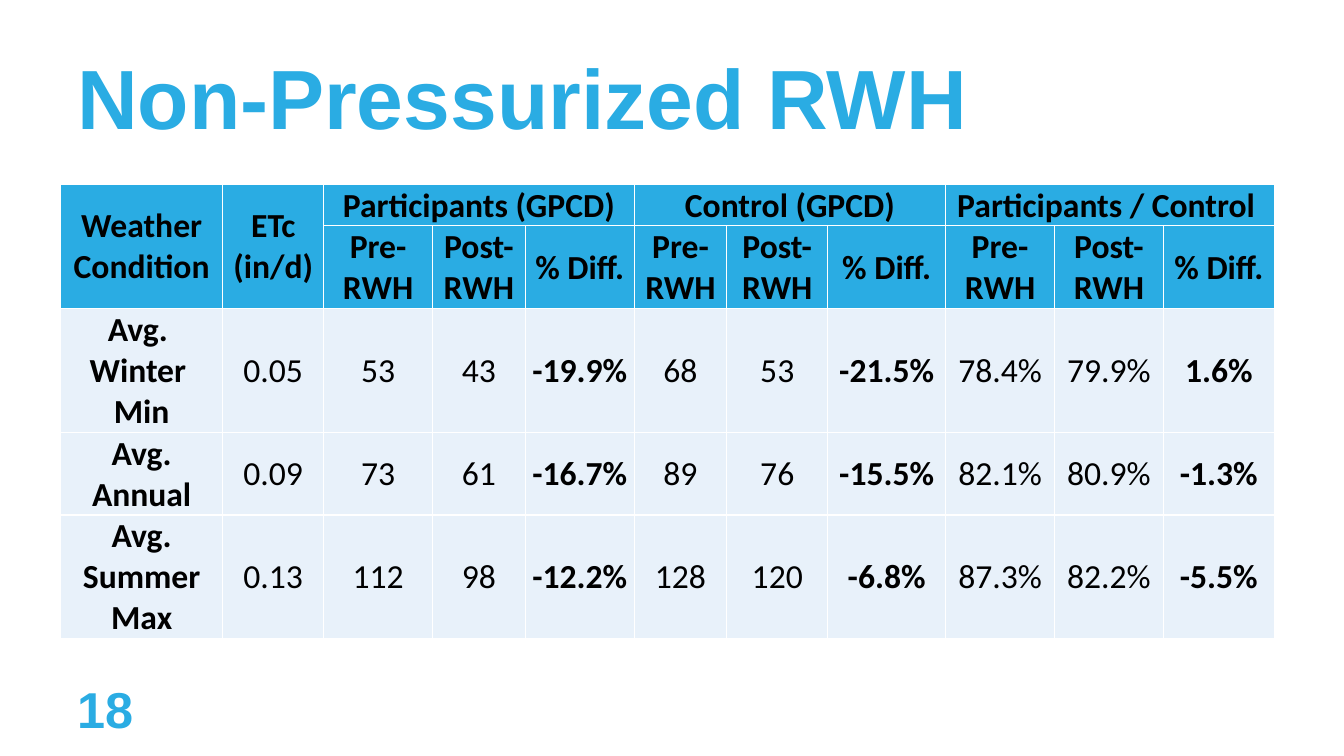
from lxml.etree import SubElement
from pptx import Presentation
from pptx.dml.color import RGBColor as RGB
from pptx.enum.text import MSO_ANCHOR as ANCHOR, PP_ALIGN as ALIGN
from pptx.oxml.ns import qn
from pptx.util import Inches, Pt

W, H = 13.33, 7.5
COLORS = {"blue": "2AACE3", "pale": "E8F1FA", "black": "000000", "white": "FFFFFF"}
COL_WIDTHS = [1.61, 1, 1.08, 0.92, 1.08, 0.92, 1, 1.17, 1.08, 1.08, 1.1]
ROW_LINES = [1, 2, 3, 2, 3]
LINE_HEIGHT = 0.41
HEADER_ROWS = 2
GROUP_START, GROUP_SIZE = 2, 3
LEAD_HEADS = ["Weather Condition", "ETc (in/d)"]
GROUPS = ["Participants (GPCD)", "Control (GPCD)", "Participants / Control "]
MEASURES = ["Pre-RWH", "Post-RWH", "% Diff."]
RECORDS = [
    ["Avg. \nWinter \nMin", "0.05", "53", "43", "-19.9%", "68", "53", "-21.5%",
     "78.4%", "79.9%", "1.6%"],
    ["Avg. Annual", "0.09", "73", "61", "-16.7%", "89", "76", "-15.5%",
     "82.1%", "80.9%", "-1.3%"],
    ["Avg. Summer Max", "0.13", "112", "98", "-12.2%", "128", "120", "-6.8%",
     "87.3%", "82.2%", "-5.5%"],
]


def add_run(p, text, font, size, color, bold):
    r = p.add_run()
    r.text = text
    r.font.name = font
    r.font.size = Pt(size)
    r.font.bold = bold
    r.font.color.rgb = RGB.from_string(COLORS[color])


def add_heading(s, text, x, y, w, h, size, anchor, spacing=1.0):
    box = s.shapes.add_textbox(Inches(x * W), Inches(y * H), Inches(w * W), Inches(h * H))
    tf = box.text_frame
    tf.word_wrap = True
    tf.vertical_anchor = anchor
    p = tf.paragraphs[0]
    p.line_spacing = spacing
    add_run(p, text, "Arial", size, "blue", True)


def set_borders(cell):
    tc_pr = cell._tc.get_or_add_tcPr()
    for index, side in enumerate(("lnL", "lnR", "lnT", "lnB")):
        ln = SubElement(tc_pr, qn(f"a:{side}"), w=str(Pt(1)))
        fill = SubElement(ln, qn("a:solidFill"))
        SubElement(fill, qn("a:srgbClr"), val=COLORS["white"])
        tc_pr.remove(ln)
        tc_pr.insert(index, ln)


def style_cell(cell, fill):
    cell.fill.solid()
    cell.fill.fore_color.rgb = RGB.from_string(COLORS[fill])
    cell.margin_left = cell.margin_right = cell.margin_top = Inches(0.01)
    cell.margin_bottom = 0
    cell.vertical_anchor = ANCHOR.MIDDLE
    set_borders(cell)


def write_cell(cell, text, bold):
    tf = cell.text_frame
    for i, line in enumerate(text.split("\n")):
        p = tf.add_paragraph() if i else tf.paragraphs[0]
        p.alignment = ALIGN.CENTER
        add_run(p, line, "Calibri", 24, "black", bold)


def write_header(table):
    for c, text in enumerate(LEAD_HEADS):
        table.cell(0, c).merge(table.cell(1, c))
        write_cell(table.cell(0, c), text, True)
    for g, group in enumerate(GROUPS):
        first = GROUP_START + g * GROUP_SIZE
        table.cell(0, first).merge(table.cell(0, first + GROUP_SIZE - 1))
        write_cell(table.cell(0, first), group, True)
        for m, measure in enumerate(MEASURES):
            write_cell(table.cell(1, first + m), measure, True)


def write_records(table):
    for r, record in enumerate(RECORDS, HEADER_ROWS):
        for c, text in enumerate(record):
            is_diff = c >= GROUP_START and (c - GROUP_START) % GROUP_SIZE == 2
            write_cell(table.cell(r, c), text, c == 0 or is_diff)


def add_usage_table(s, x, y):
    height = LINE_HEIGHT * sum(ROW_LINES)
    frame = s.shapes.add_table(len(ROW_LINES), len(COL_WIDTHS), Inches(x * W),
                               Inches(y * H), Inches(sum(COL_WIDTHS)), Inches(height))
    table = frame.table
    table.horz_banding = False
    for column, width in zip(table.columns, COL_WIDTHS):
        column.width = Inches(width)
    for r, (row, lines) in enumerate(zip(table.rows, ROW_LINES)):
        row.height = Inches(LINE_HEIGHT * lines)
        for cell in row.cells:
            style_cell(cell, "blue" if r < HEADER_ROWS else "pale")
    write_header(table)
    write_records(table)


def main():
    prs = Presentation()
    prs.slide_width, prs.slide_height = Inches(W), Inches(H)
    s = prs.slides.add_slide(prs.slide_layouts[6])
    add_heading(s, "18", 0.05, 0.89, 0.08, 0.09, 36, ANCHOR.TOP)
    add_heading(s, "Non-Pressurized RWH", 0.05, 0.07, 0.9, 0.13, 60, ANCHOR.MIDDLE, 0.9)
    add_usage_table(s, 0.045, 0.244)
    prs.save("out.pptx")


if __name__ == "__main__":
    main()
